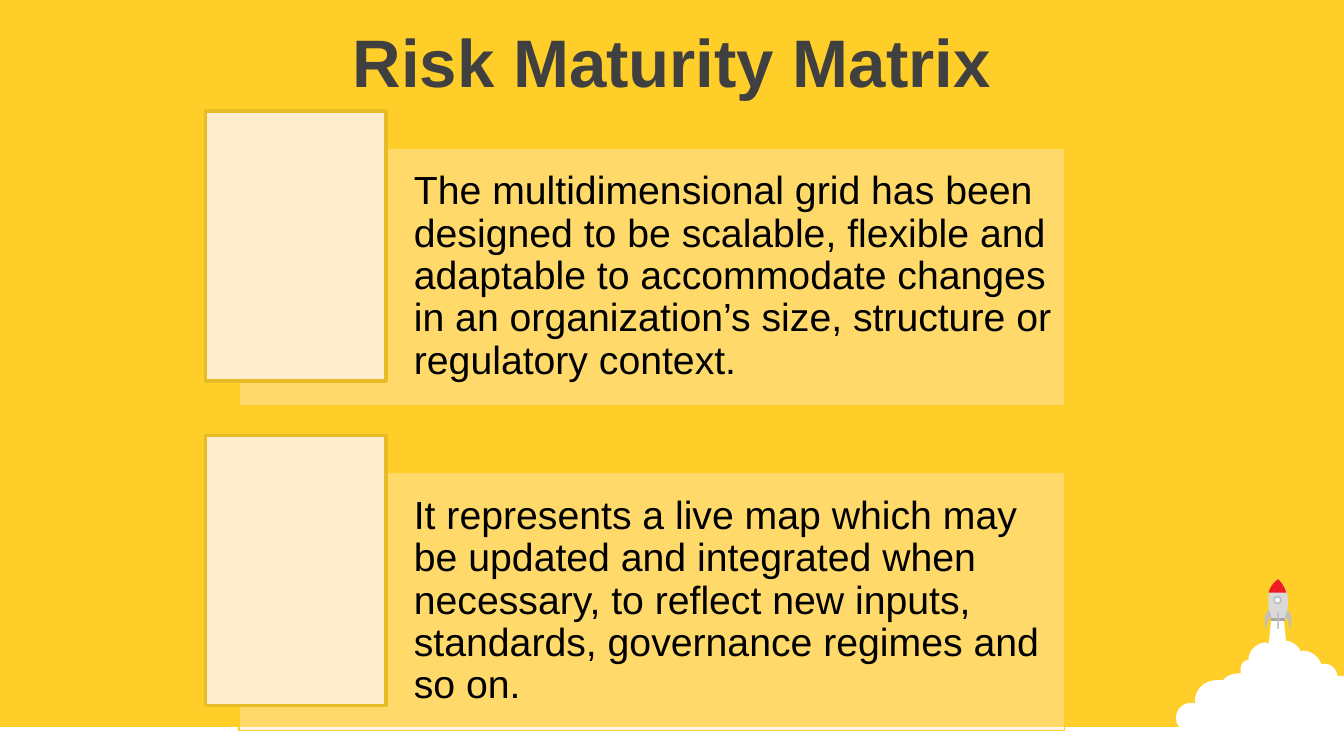
from dataclasses import dataclass

from lxml.etree import SubElement
from pptx import Presentation
from pptx.dml.color import RGBColor
from pptx.enum.shapes import MSO_SHAPE
from pptx.enum.text import MSO_ANCHOR, PP_ALIGN
from pptx.oxml.ns import qn
from pptx.util import Inches, Pt

# Square grid: 100 columns across the slide, 56.25 rows down (16:9).
COLS, ROWS = 100, 56.25
CELL = Inches(10) / COLS


@dataclass(frozen=True)
class Theme:
    font: str = "Arial"
    title_size: float = 36
    body_size: float = 21
    background: str = "FFCE29"
    cream: str = "FFEDCD"
    frame: str = "E7BB25"
    title: str = "404040"
    text: str = "000000"
    white: str = "FFFFFF"
    nose: str = "ED1C24"
    hull: str = "D9D9D9"
    band: str = "A6A6A6"
    fin: str = "BFBFBF"


@dataclass(frozen=True)
class Box:
    col: float
    row: float
    cols: float
    rows: float

    def emu(self) -> list[int]:
        return [cells(v) for v in (self.col, self.row, self.cols, self.rows)]

    def lowered(self, rows: float) -> "Box":
        return Box(self.col, self.row + rows, self.cols, self.rows)


@dataclass(frozen=True)
class Outline:
    """Steps of 2 numbers are points; steps of 6 are Bézier curves."""
    steps: tuple
    color: str


THEME = Theme()
PANEL = Box(17.8, 11, 61.4, 19.2)
TILE = Box(15.3, 8.25, 13.4, 20.1)
PITCH = 24.15
PANEL_TEXTS = (
    "The multidimensional grid has been designed to be scalable, flexible and adaptable "
    "to accommodate changes in an organization’s size, structure or regulatory context.",
    "It represents a live map which may be updated and integrated when necessary, "
    "to reflect new inputs, standards, governance regimes and so on.",
)

ROCKET_AXIS = 95.1
CLOUD = Outline((
    (94.6, 45.9), (95.5, 45.9), (95.7, 47.7), (95.9, 47.7),
    (96.2, 47.8, 96.5, 48, 96.7, 48.3), (96.8, 48.5), (96.9, 48.4),
    (97.5, 48.4, 98.1, 48.8, 98.3, 49.4), (98.6, 49.4),
    (99, 49.4, 99.4, 49.7, 99.5, 50.2), (99.5, 50.3), (100, 50.3), (100, 56),
    (99.8, 56), (99.4, 56, 99, 55.9, 98.7, 55.7), (98.6, 55.6), (98.5, 55.7),
    (98.3, 55.8, 98.1, 55.9, 97.8, 55.9), (97.5, 55.9, 97.3, 55.7, 97.1, 55.5),
    (96.9, 55.4), (96.9, 55.5), (96.7, 55.8, 96.4, 55.9, 96, 55.9),
    (95.7, 55.9, 95.4, 55.8, 95.2, 55.6), (95.1, 55.5), (94.9, 55.6),
    (94.5, 55.9, 94, 56.1, 93.4, 56.1), (92.3, 56.1, 91.7, 55.6, 91.3, 55.1),
    (91.1, 55.3, 90.7, 55.4, 90.4, 55.3), (90, 55.2, 89.4, 55, 89.3, 54.5),
    (89.3, 54.3), (89.2, 54.4), (89.1, 54.5, 88.9, 54.5, 88.6, 54.5),
    (88, 54.5, 87.5, 54, 87.5, 53.4), (87.5, 52.8, 88, 52.3, 88.6, 52.3),
    (88.8, 52.3), (88.9, 52.4), (88.9, 52.2), (88.9, 51.3, 89.6, 50.6, 90.6, 50.6),
    (91, 50.6), (91.1, 50.5), (91.4, 50.2, 91.8, 50.1, 92.3, 50.1), (92.3, 49.8),
    (92.3, 49.5, 92.5, 49.2, 92.8, 49.1), (92.9, 49.1), (92.9, 48.9),
    (93, 48.3, 93.6, 47.8, 94.2, 47.8), (94.4, 47.9),
), THEME.white)
HULL = Outline(((94.6, 46.2), (94.4, 45.3, 94, 44, 95.1, 43.1),
                (96.2, 44.1, 95.8, 45.4, 95.6, 46.2)), THEME.hull)
NOSE = Outline(((95.1, 43.1), (95.4, 43.4, 95.6, 43.7, 95.7, 44.1),
                (94.4, 44.1), (94.5, 43.7, 94.7, 43.4, 95.1, 43.1)), THEME.nose)
BAND = Outline(((94.6, 46), (95.6, 46), (95.6, 46.2), (94.6, 46.2)), THEME.band)
FIN = Outline(((94.4, 45.4), (94.6, 45.9), (94.2, 46.1, 94.3, 46.6, 94.2, 46.8),
               (94.1, 46.5, 94, 45.7, 94.4, 45.4)), THEME.fin)


def cells(count: float) -> int:
    return round(count * CELL)


def rgb(color: str) -> RGBColor:
    return RGBColor.from_string(color)


def mirrored(outline: Outline) -> Outline:
    """Flip an outline left to right about the rocket's axis."""
    steps = tuple(tuple(2 * ROCKET_AXIS - v if i % 2 == 0 else v for i, v in enumerate(step))
                  for step in outline.steps)
    return Outline(steps, outline.color)


def flatten(steps: tuple, pieces: int = 8) -> list[tuple[int, int]]:
    """Turn points and curves into a list of vertices in EMU."""
    points = []
    for step in steps:
        if len(step) == 2:
            points.append(step)
            continue
        start, (a, b, c) = points[-1], (step[0:2], step[2:4], step[4:6])
        for t in (n / pieces for n in range(1, pieces + 1)):
            u = 1 - t
            points.append(tuple(
                u**3 * start[k] + 3 * u * u * t * a[k] + 3 * u * t * t * b[k] + t**3 * c[k]
                for k in (0, 1)))
    return [(cells(x), cells(y)) for x, y in points]


def paint(sp, fill: str, line: str | None = None, width: float = 1, alpha: int = 100) -> None:
    sp.shadow.inherit = False
    sp.fill.solid()
    sp.fill.fore_color.rgb = rgb(fill)
    if alpha < 100:
        color = sp.element.spPr.find(qn("a:solidFill"))[0]
        SubElement(color, qn("a:alpha"), val=str(alpha * 1000))
    if line is None:
        sp.line.fill.background()
    else:
        sp.line.color.rgb = rgb(line)
        sp.line.width = Pt(width)
        SubElement(sp.element.spPr.find(qn("a:ln")), qn("a:round"))


def add_box(shapes, box: Box, fill: str, kind=MSO_SHAPE.RECTANGLE, **style) -> None:
    paint(shapes.add_shape(kind, *box.emu()), fill, **style)


def add_outline(shapes, outline: Outline) -> None:
    start, *rest = flatten(outline.steps)
    builder = shapes.build_freeform(*start, scale=1.0)
    builder.add_line_segments(rest, close=True)
    paint(builder.convert_to_shape(), outline.color)


def add_text(shapes, box: Box, text: str, size: float, color: str, align, bold: bool = False):
    tf = shapes.add_textbox(*box.emu()).text_frame
    tf.word_wrap = True
    tf.vertical_anchor = MSO_ANCHOR.MIDDLE
    p = tf.paragraphs[0]
    p.alignment = align
    r = p.add_run()
    r.text = text
    r.font.name, r.font.size, r.font.bold = THEME.font, Pt(size), bold
    r.font.color.rgb = rgb(color)
    return tf


def add_rocket(shapes) -> None:
    for outline in (CLOUD, HULL, BAND, NOSE):
        add_outline(shapes, outline)
    add_box(shapes, Box(94.8, 44.4, 0.5, 0.5), THEME.white, MSO_SHAPE.OVAL, line=THEME.fin)
    add_box(shapes, Box(95.05, 45.5, 0.1, 1.3), THEME.fin)
    for fin in (FIN, mirrored(FIN)):
        add_outline(shapes, fin)


def add_panel(shapes, drop: float, text: str) -> None:
    panel = PANEL.lowered(drop)
    add_box(shapes, panel, THEME.cream, line=THEME.background, width=0.75, alpha=40)
    tf = add_text(shapes, panel, text, THEME.body_size, THEME.text, PP_ALIGN.LEFT)
    tf.margin_left = cells(13)
    tf.margin_top = tf.margin_right = tf.margin_bottom = cells(0.9)
    tf.paragraphs[0].line_spacing = 0.9
    add_box(shapes, TILE.lowered(drop), THEME.cream, line=THEME.frame, width=2)


def main() -> None:
    prs = Presentation()
    prs.slide_width, prs.slide_height = cells(COLS), cells(ROWS)
    s = prs.slides.add_slide(prs.slide_layouts[6])
    s.background.fill.solid()
    s.background.fill.fore_color.rgb = rgb(THEME.background)

    add_box(s.shapes, Box(0, 54.1, COLS, 2.4), THEME.white)
    add_rocket(s.shapes)
    add_text(s.shapes, Box(0, 1.4, COLS, 6.3), "Risk Maturity Matrix",
             THEME.title_size, THEME.title, PP_ALIGN.CENTER, bold=True)
    for index, text in enumerate(PANEL_TEXTS):
        add_panel(s.shapes, index * PITCH, text)
    prs.save("out.pptx")


if __name__ == "__main__":
    main()
